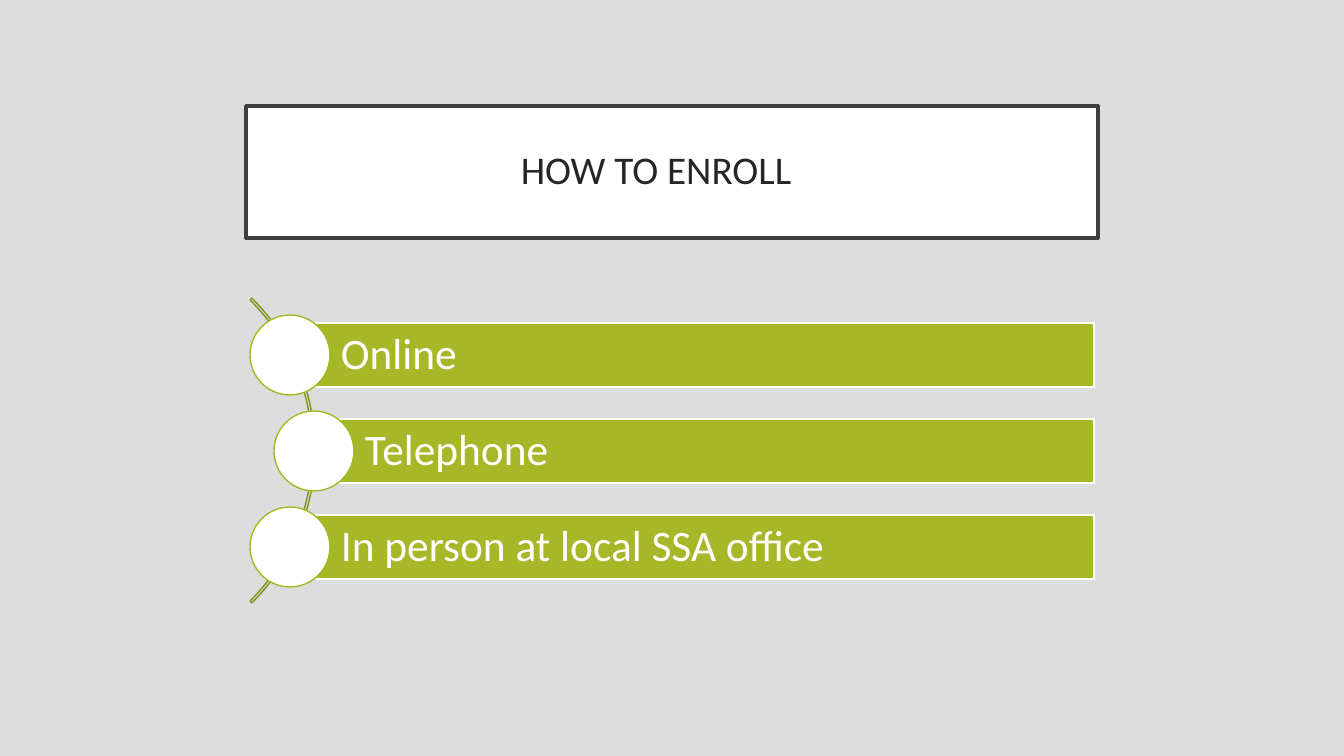
from pptx import Presentation
from pptx.dml.color import RGBColor
from pptx.enum.shapes import MSO_SHAPE as Preset
from pptx.enum.text import MSO_ANCHOR as Anchor, MSO_AUTO_SIZE as AutoSize, PP_ALIGN as Align
from pptx.util import Pt

SLIDE_WIDTH, SLIDE_HEIGHT = 1344, 756
EMU_PER_PX = 12192000 / SLIDE_WIDTH

GREY = RGBColor(0xDD, 0xDD, 0xDD)
WHITE = RGBColor(0xFF, 0xFF, 0xFF)
CHARCOAL = RGBColor(0x3F, 0x3F, 0x3F)
INK = RGBColor(0x26, 0x26, 0x26)
GREEN = RGBColor(0xA6, 0xB7, 0x27)
RING_GREEN = RGBColor(0xA4, 0xB7, 0x24)
ARC_GREEN = RGBColor(0x81, 0x91, 0x1B)

WAYS = [("Online", 290), ("Telephone", 314), ("In person at local SSA office", 290)]
FIRST_CENTER, ROW_STEP = 355, 96
BAR_RIGHT, BAR_HEIGHT = 1094, 64
CIRCLE_SIZE = 80


def px(value):
    return round(value * EMU_PER_PX)


def paint(shape, fill, line, width):
    if fill is None:
        shape.fill.background()
    else:
        shape.fill.solid()
        shape.fill.fore_color.rgb = fill
    shape.line.color.rgb = line
    shape.line.width = Pt(width)


def write(shape, text, size, color, align, insets):
    frame = shape.text_frame
    frame.text = text
    frame.word_wrap = True
    frame.auto_size = AutoSize.NONE
    frame.vertical_anchor = Anchor.MIDDLE
    (frame.margin_left, frame.margin_top,
     frame.margin_right, frame.margin_bottom) = map(px, insets)
    paragraph = frame.paragraphs[0]
    paragraph.alignment = align
    paragraph.line_spacing = 0.9
    font = paragraph.runs[0].font
    font.name = "Calibri"
    font.size = Pt(size)
    font.color.rgb = color


def add_shape(slide, preset, box, fill, line):
    shape = slide.shapes.add_shape(preset, *map(px, box))
    shape.shadow.inherit = False
    paint(shape, fill, line, 1)
    return shape


def add_title(slide, text):
    title = slide.shapes.title
    title.left, title.top, title.width, title.height = map(px, (246, 106, 852, 132))
    paint(title, WHITE, CHARCOAL, 2.5)
    write(title, text, 28, INK, Align.CENTER, (20, 20, 20, 20))


def add_arc(slide):
    arc = add_shape(slide, Preset.BLOCK_ARC, (-116, 235, 431, 431), None, ARC_GREEN)
    for index, value in enumerate((189, 27, 0.006)):
        arc.adjustments[index] = value


def add_way(slide, text, center_x, center_y):
    bar_box = (center_x, center_y - BAR_HEIGHT // 2, BAR_RIGHT - center_x, BAR_HEIGHT)
    bar = add_shape(slide, Preset.RECTANGLE, bar_box, GREEN, WHITE)
    write(bar, text, 31, WHITE, Align.LEFT, (51, 9, 9, 9))
    radius = CIRCLE_SIZE // 2
    circle_box = (center_x - radius, center_y - radius, CIRCLE_SIZE, CIRCLE_SIZE)
    add_shape(slide, Preset.OVAL, circle_box, WHITE, RING_GREEN)


def main():
    presentation = Presentation()
    presentation.slide_width = px(SLIDE_WIDTH)
    presentation.slide_height = px(SLIDE_HEIGHT)
    slide = presentation.slides.add_slide(presentation.slide_layouts[5])
    slide.background.fill.solid()
    slide.background.fill.fore_color.rgb = GREY
    add_title(slide, "HOW TO ENROLL\t")
    add_arc(slide)
    for row, (text, center_x) in enumerate(WAYS):
        add_way(slide, text, center_x, FIRST_CENTER + row * ROW_STEP)
    presentation.save("out.pptx")


if __name__ == "__main__":
    main()
